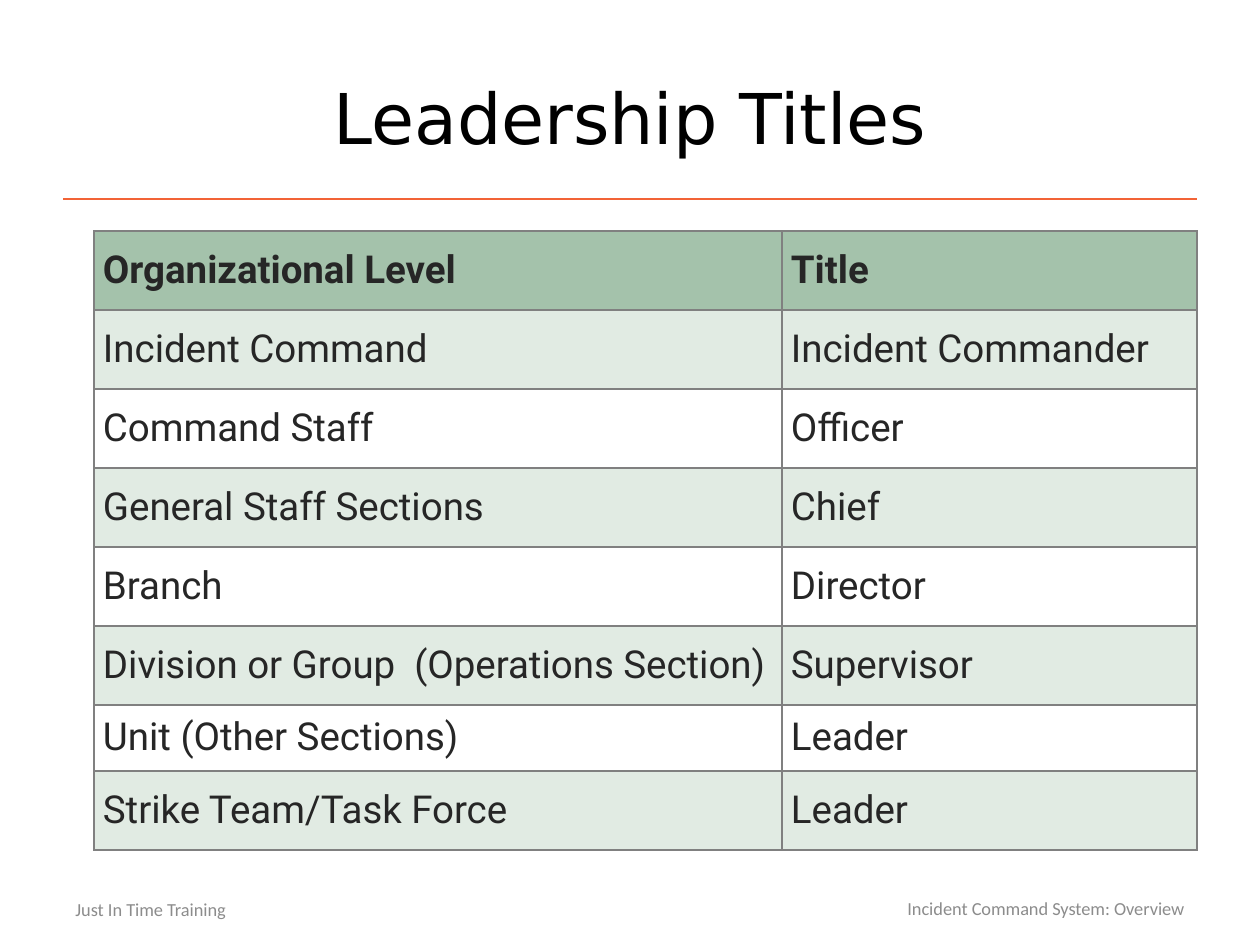
from dataclasses import dataclass

from lxml import etree
from pptx import Presentation
from pptx.dml.color import RGBColor
from pptx.enum.shapes import MSO_CONNECTOR
from pptx.enum.text import MSO_ANCHOR, PP_ALIGN
from pptx.oxml import parse_xml
from pptx.oxml.ns import nsdecls, qn
from pptx.util import Emu, Pt


@dataclass(frozen=True)
class Theme:
    title_font: str = "DejaVu Sans"
    table_font: str = "Roboto"
    footer_font: str = "Calibri"
    title_size: float = 40
    table_size: float = 22
    footer_size: float = 10.5
    title_color: str = "000000"
    table_color: str = "262626"
    footer_color: str = "8C8C8C"
    rule: str = "F26336"
    border: str = "808080"
    header_fill: str = "A4C2AB"
    band_fill: str = "E1EBE3"
    plain_fill: str = "FFFFFF"


theme = Theme()


def px(length):
    return Emu(round(length * 914400 / 126))


def write(frame, text, font, size, color, alignment=PP_ALIGN.LEFT, bold=False):
    paragraph = frame.paragraphs[0]
    paragraph.text = text
    paragraph.alignment = alignment
    paragraph.font.name = font
    paragraph.font.size = Pt(size)
    paragraph.font.bold = bold
    paragraph.font.color.rgb = RGBColor.from_string(color)


presentation = Presentation()
presentation.slide_width, presentation.slide_height = px(1260), px(945)
slide = presentation.slides.add_slide(presentation.slide_layouts[5])

# Title
title = slide.shapes.title
title.left, title.top, title.width, title.height = px(63), px(38), px(1134), px(157)
title.text_frame.vertical_anchor = MSO_ANCHOR.MIDDLE
write(title.text_frame, "Leadership Titles", theme.title_font,
      theme.title_size, theme.title_color, PP_ALIGN.CENTER)

# Rule under the title
rule = slide.shapes.add_connector(
    MSO_CONNECTOR.STRAIGHT, px(63), px(199), px(1197), px(199))
rule.line.color.rgb = RGBColor.from_string(theme.rule)
rule.line.width = Pt(1.25)
etree.SubElement(rule._element.spPr, qn("a:effectLst"))

# Table of levels and titles
rows = [
    ("Organizational Level", "Title"),
    ("Incident Command", "Incident Commander"),
    ("Command Staff", "Officer"),
    ("General Staff Sections", "Chief"),
    ("Branch", "Director"),
    ("Division or Group  (Operations Section)", "Supervisor"),
    ("Unit (Other Sections)", "Leader"),
    ("Strike Team/Task Force", "Leader"),
]
column_widths = [688, 415]
row_heights = [79, 79, 79, 79, 79, 79, 66, 79]
table = slide.shapes.add_table(
    len(rows), len(column_widths), px(94), px(231),
    px(sum(column_widths)), px(sum(row_heights))).table
table.horz_banding = False
for column, width in zip(table.columns, column_widths):
    column.width = px(width)

for row_index, (row, height) in enumerate(zip(rows, row_heights)):
    table.rows[row_index].height = px(height)
    is_header = row_index == 0
    if is_header:
        fill = theme.header_fill
    else:
        fill = theme.band_fill if row_index % 2 else theme.plain_fill
    for column_index, text in enumerate(row):
        cell = table.cell(row_index, column_index)
        cell.margin_left = cell.margin_right = px(9)
        cell.margin_top = cell.margin_bottom = 0
        cell.vertical_anchor = MSO_ANCHOR.MIDDLE
        write(cell.text_frame, text, theme.table_font, theme.table_size,
              theme.table_color, bold=is_header)
        # Borders come before the fill in the cell properties
        properties = cell._tc.get_or_add_tcPr()
        for side in ("lnL", "lnR", "lnT", "lnB"):
            properties.append(parse_xml(
                f'<a:{side} {nsdecls("a")} w="{Pt(1)}"><a:solidFill>'
                f'<a:srgbClr val="{theme.border}"/></a:solidFill></a:{side}>'))
        cell.fill.solid()
        cell.fill.fore_color.rgb = RGBColor.from_string(fill)

# Footers
footers = [
    ("Just In Time Training", 63, 294, 34, PP_ALIGN.LEFT),
    ("Incident Command System: Overview", 798, 399, 32, PP_ALIGN.RIGHT),
]
for text, left, width, height, alignment in footers:
    footer = slide.shapes.add_textbox(px(left), px(892), px(width), px(height))
    footer.text_frame.word_wrap = True
    footer.text_frame.vertical_anchor = MSO_ANCHOR.MIDDLE
    write(footer.text_frame, text, theme.footer_font, theme.footer_size,
          theme.footer_color, alignment)

presentation.save("out.pptx")
